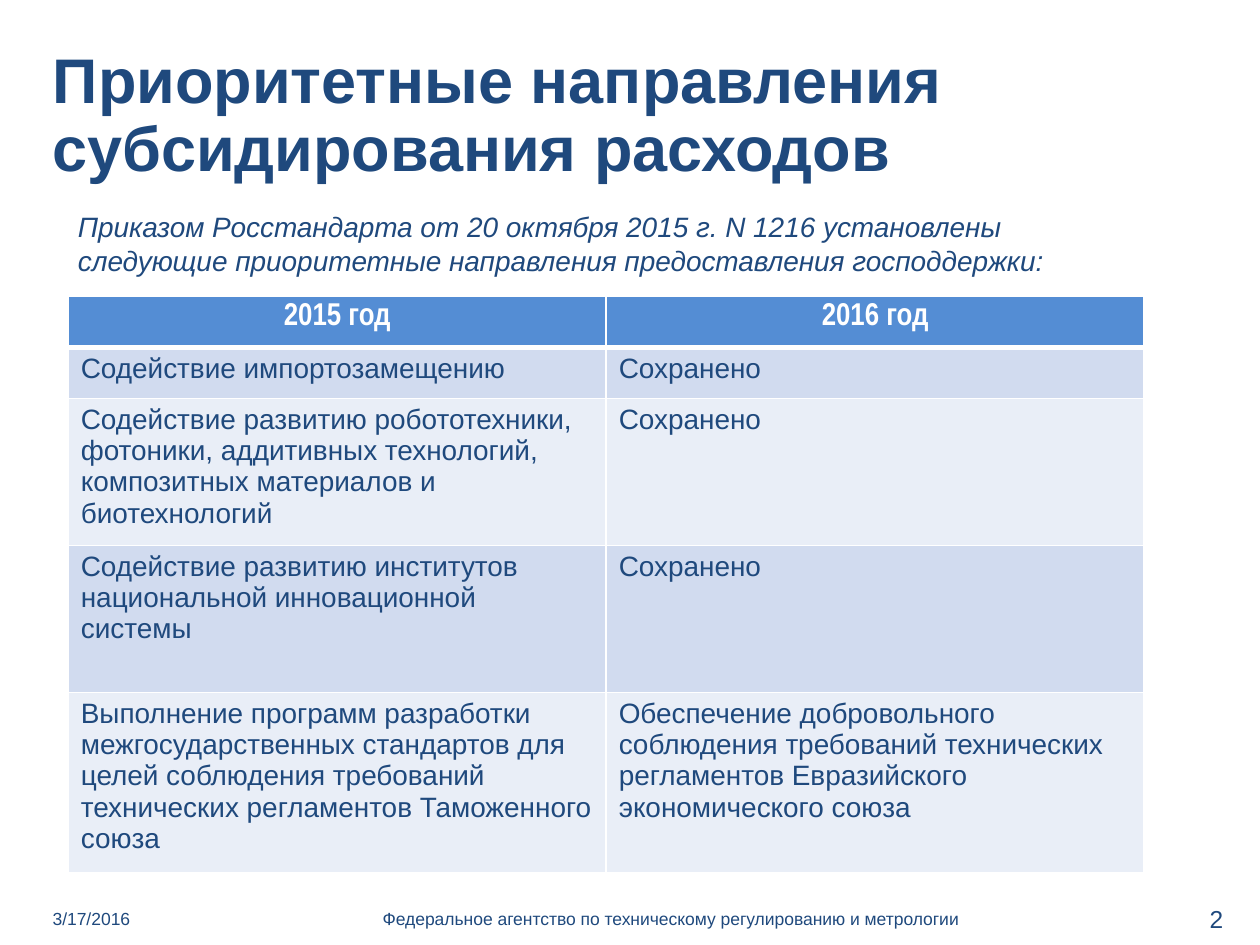
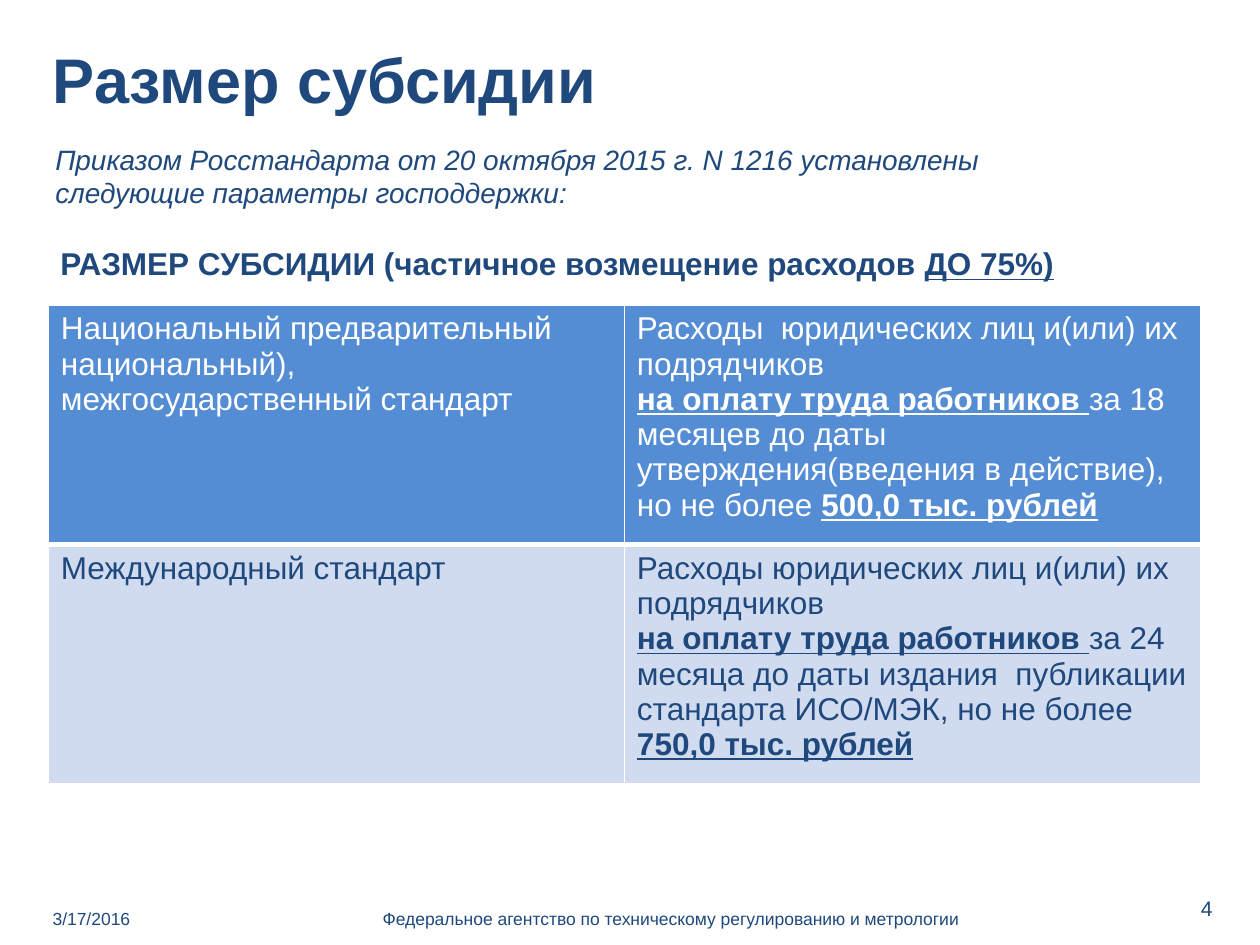
from dataclasses import dataclass
from pptx import Presentation
from pptx.dml.color import RGBColor
from pptx.enum.text import MSO_ANCHOR as Anchor, MSO_AUTO_SIZE as Fit, PP_ALIGN as Align
from pptx.oxml import parse_xml
from pptx.oxml.ns import nsdecls
from pptx.util import Pt

# Shared palette, fonts and wording
NAVY = RGBColor(0x1F, 0x49, 0x7D)
BLUE = RGBColor(0x54, 0x8D, 0xD4)
BAND = RGBColor(0xD1, 0xDB, 0xEF)
PALE = RGBColor(0xE9, 0xEE, 0xF7)
WHITE = RGBColor(0xFF, 0xFF, 0xFF)
SANS, SLIM = "Arial", "Arial Narrow"
DATE = "3/17/2016"
AGENCY = "Федеральное агентство по техническому регулированию и метрологии"


class Key(str):
    """Bold underlined part of a line."""


@dataclass
class Style:
    size: float
    color: RGBColor = NAVY
    bold: bool = False
    italic: bool = False
    face: str = SANS
    align: Align = Align.LEFT
    line: float | None = None
    after: float = 0


@dataclass
class Box:
    left: float
    top: float
    width: float
    height: float


@dataclass
class Grid:
    left: float
    top: float
    col: float
    rows: list[float]  # least heights, rows grow with their text
    cells: list[list]
    head: Style
    body: Style


TITLE = Style(36, bold=True, line=0.9)
INTRO = Style(16, italic=True, after=10)
SMALL = Style(10)
MID = Style(10, align=Align.CENTER)


def write(frame, text, style: Style) -> None:
    """Fill a frame: a string, or a list of lines made of parts."""
    lines = [[text]] if isinstance(text, str) else text
    for i, parts in enumerate(lines):
        para = frame.paragraphs[0] if i == 0 else frame.add_paragraph()
        para.alignment = style.align
        para.space_before, para.space_after = Pt(0), Pt(style.after)
        if style.line:
            para.line_spacing = style.line
        font = para.font
        font.size, font.name = Pt(style.size), style.face
        font.bold, font.italic = style.bold, style.italic
        font.color.rgb = style.color
        for part in parts:
            run = para.add_run()
            run.text = part
            if isinstance(part, Key):
                run.font.bold = run.font.underline = True


def label(slide, box: Box, text, style: Style,
          anchor: Anchor = Anchor.TOP, right: float = 7.2) -> None:
    shape = slide.shapes.add_textbox(
        Pt(box.left), Pt(box.top), Pt(box.width), Pt(box.height))
    frame = shape.text_frame
    frame.word_wrap = True
    frame.vertical_anchor = anchor
    frame.margin_right = Pt(right)
    write(frame, text, style)


def border(cell, row: int) -> None:
    """White rules, thick below the header."""
    for side in "LRTB":
        width = Pt(3 if (row, side) == (0, "B") else 1)
        cell._tc.get_or_add_tcPr().append(parse_xml(
            f'<a:ln{side} {nsdecls("a")} w="{width}"><a:solidFill>'
            f'<a:srgbClr val="{WHITE}"/></a:solidFill></a:ln{side}>'))


def draw(slide, grid: Grid) -> None:
    cols = len(grid.cells[0])
    table = slide.shapes.add_table(
        len(grid.rows), cols, Pt(grid.left), Pt(grid.top),
        Pt(grid.col * cols), Pt(sum(grid.rows))).table
    table.first_row = table.horz_banding = False
    for col in table.columns:
        col.width = Pt(grid.col)
    for r, high in enumerate(grid.rows):
        table.rows[r].height = Pt(high)
        for c, text in enumerate(grid.cells[r]):
            cell = table.cell(r, c)
            border(cell, r)
            cell.fill.solid()
            cell.fill.fore_color.rgb = BLUE if r == 0 else (PALE, BAND)[r % 2]
            write(cell.text_frame, text, grid.body if r else grid.head)


def start(deck, title: str, page: str, spot: Box, size: float):
    """Add a slide with its title, date, agency and page number."""
    slide = deck.slides.add_slide(deck.slide_layouts[5])
    head = slide.shapes.title
    head.left, head.top, head.width, head.height = Pt(23), Pt(24.5), Pt(672), Pt(46)
    frame = head.text_frame
    frame.auto_size, frame.vertical_anchor = Fit.NONE, Anchor.TOP
    write(frame, title, TITLE)
    label(slide, Box(23, 515, 69, 20), DATE, SMALL, Anchor.MIDDLE)
    label(slide, Box(99.4, 515, 567.4, 20), AGENCY, MID, Anchor.MIDDLE)
    label(slide, spot, page, Style(size, align=Align.CENTER), Anchor.MIDDLE, 2.9)
    return slide


def costs(lead: str, term: str, limit: str) -> list:
    return [[f"{lead} юридических лиц и(или) их подрядчиков"],
            [Key("на оплату труда работников "), term, Key(limit)]]


def main() -> None:
    deck = Presentation()
    deck.slide_width, deck.slide_height = Pt(720), Pt(540)

    # Priority directions
    slide = start(deck, "Приоритетные направления субсидирования расходов",
                  "2", Box(666, 515, 54, 20), 14)
    label(slide, Box(37.4, 116.4, 614, 46),
          "Приказом Росстандарта от 20 октября 2015 г. N 1216 установлены "
          "следующие приоритетные направления предоставления господдержки:", INTRO)
    kept = "Сохранено"
    draw(slide, Grid(39, 169.2, 307.4, [29.2, 29.2, 84, 84, 103], [
        ["2015 год", "2016 год"],
        ["Содействие импортозамещению", kept],
        ["Содействие развитию робототехники, фотоники, аддитивных технологий, "
         "композитных материалов и биотехнологий", kept],
        ["Содействие развитию институтов национальной инновационной системы", kept],
        ["Выполнение программ разработки межгосударственных стандартов для целей "
         "соблюдения требований технических регламентов Таможенного союза",
         "Обеспечение добровольного соблюдения требований технических "
         "регламентов Евразийского экономического союза"],
    ], Style(18, WHITE, bold=True, face=SLIM, align=Align.CENTER), Style(16)))

    # Size of the subsidy
    slide = start(deck, "Размер субсидии", "4", Box(655, 502.5, 65, 32.5), 12)
    draw(slide, Grid(27.6, 174.3, 329.2, [67, 29.5], [
        ["Национальный предварительный национальный), межгосударственный стандарт",
         costs("Расходы ", "за 18 месяцев до даты утверждения(введения в действие), "
               "но не более ", "500,0 тыс. рублей")],
        ["Международный стандарт",
         costs("Расходы", "за 24 месяца до даты издания  публикации стандарта "
               "ИСО/МЭК, но не более ", "750,0 тыс. рублей")],
    ], Style(18, WHITE), Style(18)))
    label(slide, Box(27.4, 125.3, 643, 68),
          [["РАЗМЕР СУБСИДИИ (частичное возмещение расходов ", Key("ДО 75%)")]],
          Style(18, bold=True, line=1.5))
    label(slide, Box(24.5, 77.8, 614, 46),
          "Приказом Росстандарта от 20 октября 2015 г. N 1216 установлены "
          "следующие параметры господдержки:", INTRO)

    deck.save("out.pptx")


if __name__ == "__main__":
    main()
